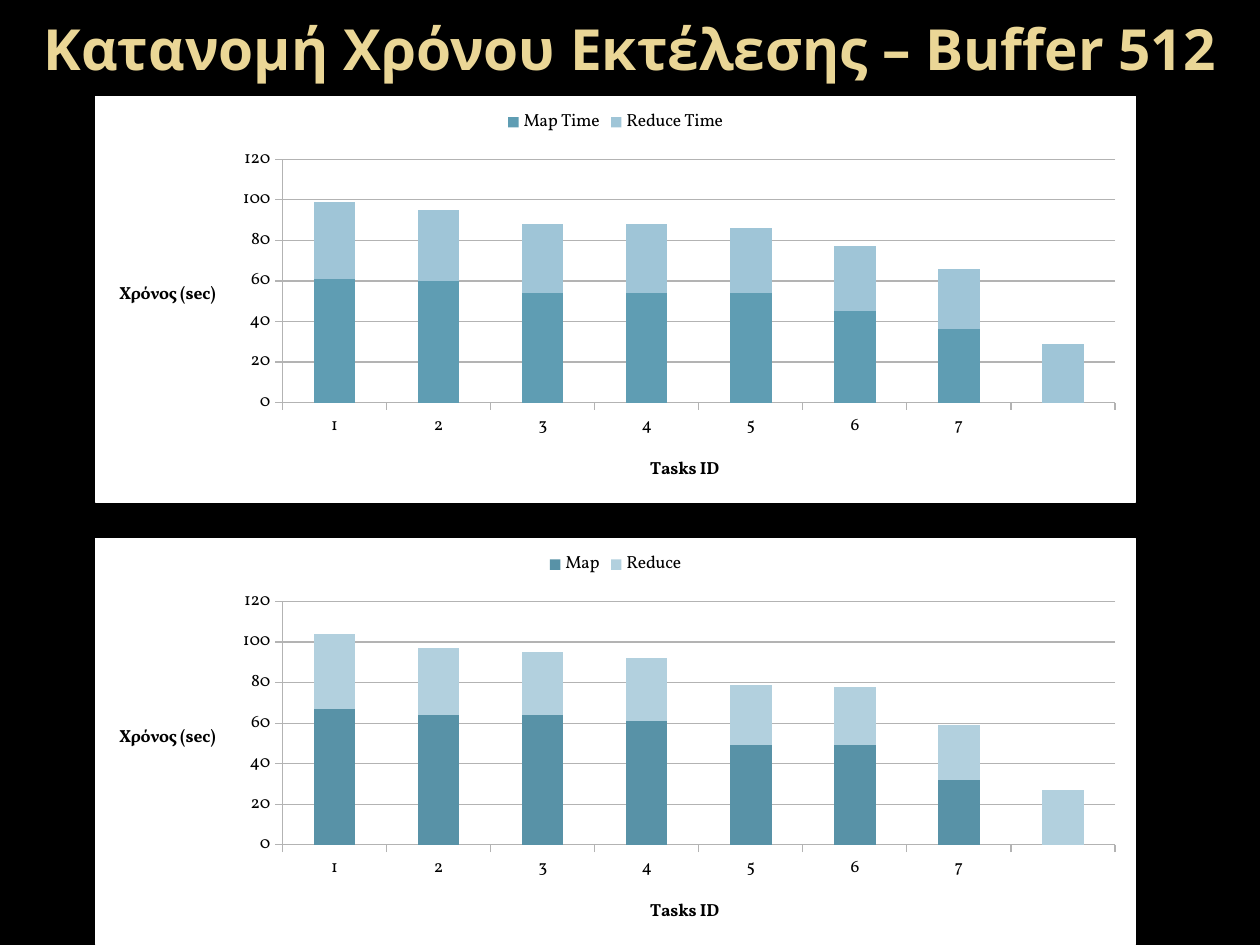
from dataclasses import dataclass

from lxml import etree
from pptx import Presentation
from pptx.chart.data import CategoryChartData
from pptx.dml.color import RGBColor
from pptx.enum.chart import XL_CHART_TYPE, XL_LEGEND_POSITION, XL_TICK_MARK
from pptx.enum.text import MSO_ANCHOR, MSO_AUTO_SIZE, PP_ALIGN
from pptx.oxml import parse_xml
from pptx.oxml.ns import nsdecls, qn
from pptx.util import Inches, Pt

STACKED = XL_CHART_TYPE.COLUMN_STACKED
TOP = XL_LEGEND_POSITION.TOP
OUTSIDE = XL_TICK_MARK.OUTSIDE
MIDDLE = MSO_ANCHOR.MIDDLE
NO_FIT = MSO_AUTO_SIZE.NONE
CENTER = PP_ALIGN.CENTER

BLACK = RGBColor(0x00, 0x00, 0x00)
WHITE = RGBColor(0xFF, 0xFF, 0xFF)
GOLD = RGBColor(0xEA, 0xD6, 0x96)
GRID = RGBColor(0xB3, 0xB3, 0xB3)
TEAL = RGBColor(0x5F, 0x9D, 0xB3)
SKY = RGBColor(0x9F, 0xC5, 0xD7)
DEEP_TEAL = RGBColor(0x58, 0x92, 0xA7)
PALE_SKY = RGBColor(0xB2, 0xD0, 0xDE)

TASKS = ["1", "2", "3", "4", "5", "6", "7", ""]
CHART_FONT = "Vollkorn"


@dataclass
class Series:
    name: str
    values: list
    color: RGBColor


@dataclass
class TimeChart:
    top: float
    series: list


CHARTS = [
    TimeChart(0.76, [
        Series("Map Time", [61, 60, 54, 54, 54, 45, 36, None], TEAL),
        Series("Reduce Time", [38, 35, 34, 34, 32, 32, 30, 29], SKY),
    ]),
    TimeChart(4.27, [
        Series("Map", [67, 64, 64, 61, 49, 49, 32, None], DEEP_TEAL),
        Series("Reduce", [37, 33, 31, 31, 30, 29, 27, 27], PALE_SKY),
    ]),
]


def set_layout(parent, index: int, **settings) -> None:
    for old in parent.findall(qn("c:layout")):
        parent.remove(old)
    layout = etree.Element(qn("c:layout"))
    manual = etree.SubElement(layout, qn("c:manualLayout"))
    for tag, value in settings.items():
        etree.SubElement(manual, qn(f"c:{tag}")).set("val", str(value))
    parent.insert(index, layout)


def style_font(font, size: float, color: RGBColor, name: str, bold: bool = False) -> None:
    font.size = Pt(size)
    font.name = name
    font.bold = bold
    font.color.rgb = color


def style_axis(axis, title: str, x: float, y: float) -> None:
    axis.major_tick_mark = OUTSIDE
    axis.format.line.color.rgb = GRID
    style_font(axis.tick_labels.font, 10, BLACK, CHART_FONT)
    tf = axis.axis_title.text_frame
    tf.text = title
    style_font(tf.paragraphs[0].runs[0].font, 10, BLACK, CHART_FONT, True)
    body = axis.axis_title._element.find(f".//{qn('a:bodyPr')}")
    body.set("rot", "0")
    body.set("vert", "horz")
    set_layout(axis.axis_title._element, 1, xMode="edge", yMode="edge", x=x, y=y)


def fill_background(chart) -> None:
    sp_pr = parse_xml(
        f'<c:spPr {nsdecls("c", "a")}>'
        f'<a:solidFill><a:srgbClr val="{WHITE}"/></a:solidFill>'
        f'<a:ln w="9525"><a:solidFill><a:srgbClr val="{WHITE}"/></a:solidFill></a:ln>'
        '</c:spPr>'
    )
    chart._chartSpace.find(qn("c:chart")).addnext(sp_pr)


def add_time_chart(slide, item: TimeChart) -> None:
    data = CategoryChartData()
    data.categories = TASKS
    for s in item.series:
        data.add_series(s.name, s.values)
    chart = slide.shapes.add_chart(
        STACKED, Inches(0.75), Inches(item.top), Inches(8.27), Inches(3.23), data
    ).chart
    chart.has_title = False
    style_font(chart.font, 10, BLACK, CHART_FONT)
    fill_background(chart)

    chart.has_legend = True
    chart.legend.position = TOP
    chart.legend.include_in_layout = False
    style_font(chart.legend.font, 10, BLACK, CHART_FONT)

    plot = chart.plots[0]
    plot.overlap = 100
    plot.gap_width = 150
    plot.vary_by_categories = False
    for series, s in zip(plot.series, item.series):
        series.format.fill.solid()
        series.format.fill.fore_color.rgb = s.color

    style_axis(chart.category_axis, "Tasks ID", 0.53, 0.88)
    style_axis(chart.value_axis, "Χρόνος (sec)", 0.02, 0.45)
    chart.value_axis.minimum_scale = 0
    chart.value_axis.maximum_scale = 120
    chart.value_axis.major_unit = 20
    chart.value_axis.has_major_gridlines = True
    chart.value_axis.major_gridlines.format.line.color.rgb = GRID
    set_layout(
        chart._chartSpace.find(f".//{qn('c:plotArea')}"), 0,
        layoutTarget="inner", xMode="edge", yMode="edge",
        x=0.18, y=0.155, w=0.8, h=0.6,
    )


def set_title(slide, text: str) -> None:
    sp = slide.shapes.title
    sp.left, sp.top, sp.width, sp.height = 0, 0, Inches(10), Inches(0.76)
    tf = sp.text_frame
    tf.text = text
    tf.word_wrap = True
    tf.auto_size = NO_FIT
    tf.vertical_anchor = MIDDLE
    p = tf.paragraphs[0]
    p.alignment = CENTER
    style_font(p.runs[0].font, 32.4, GOLD, "Open Sans", True)


def main() -> None:
    prs = Presentation()
    prs.slide_width, prs.slide_height = Inches(10), Inches(7.5)
    slide = prs.slides.add_slide(prs.slide_layouts[5])
    slide.background.fill.solid()
    slide.background.fill.fore_color.rgb = BLACK
    for item in CHARTS:
        add_time_chart(slide, item)
    set_title(slide, "Κατανομή Χρόνου Εκτέλεσης – Buffer 512")
    prs.save("out.pptx")


if __name__ == "__main__":
    main()
